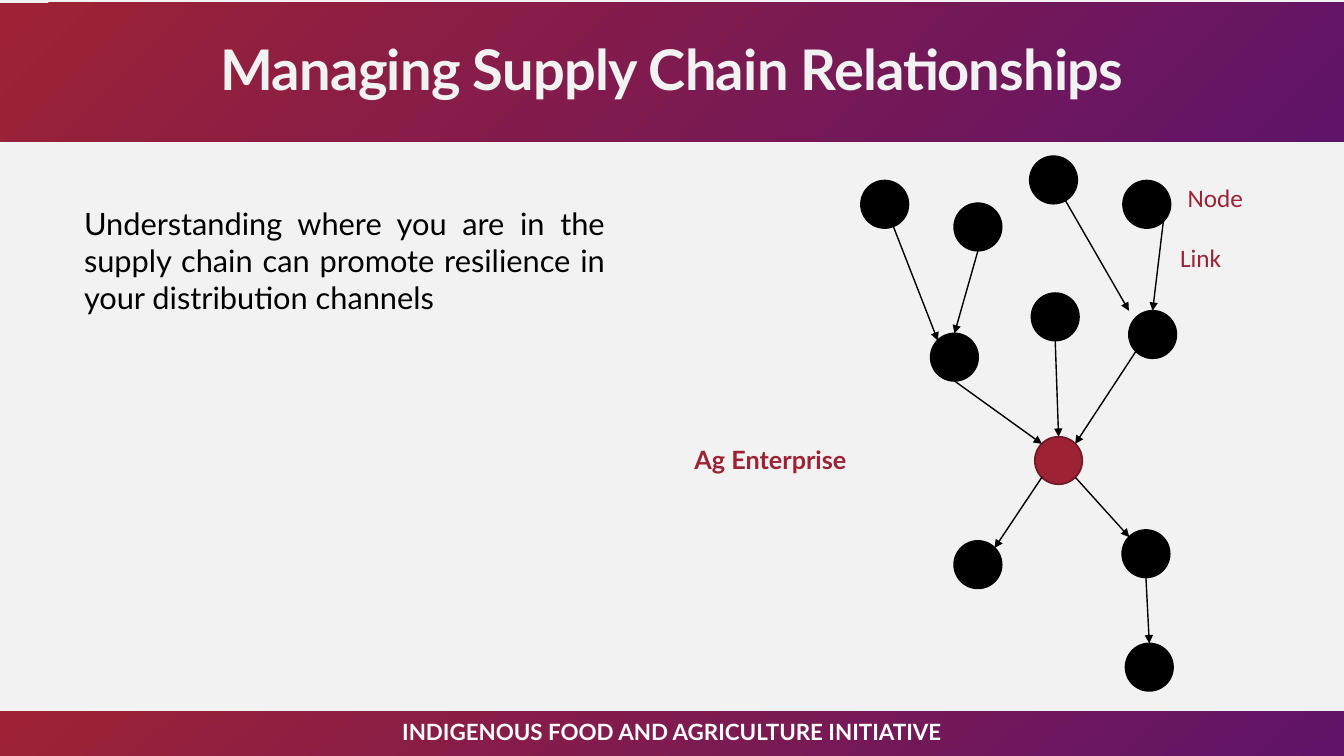
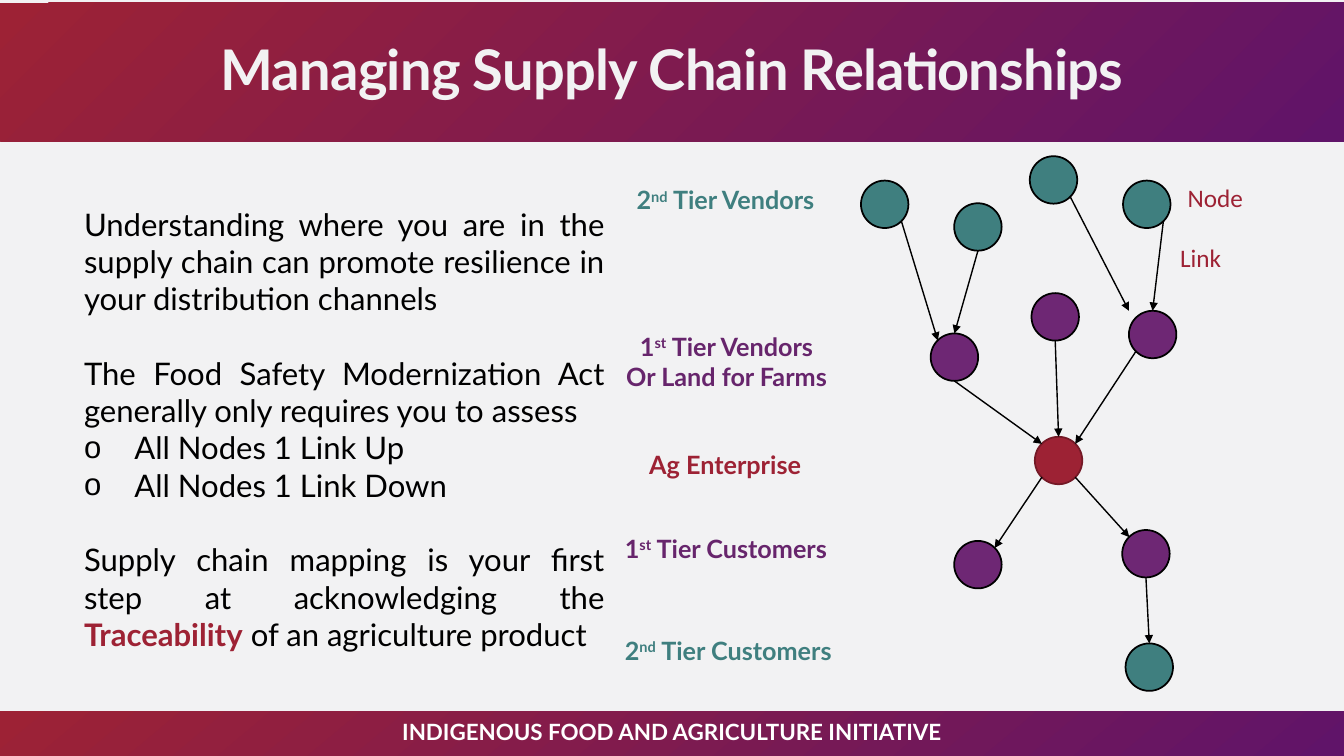
from dataclasses import dataclass

from lxml import etree
from pptx import Presentation
from pptx.dml.color import RGBColor
from pptx.enum.shapes import MSO_CONNECTOR, MSO_SHAPE
from pptx.enum.text import MSO_ANCHOR, MSO_AUTO_SIZE, PP_ALIGN
from pptx.oxml.ns import qn
from pptx.util import Emu, Pt

RECT, OVAL = MSO_SHAPE.RECTANGLE, MSO_SHAPE.OVAL
STRAIGHT = MSO_CONNECTOR.STRAIGHT
LEFT, CENTER, JUSTIFY = PP_ALIGN.LEFT, PP_ALIGN.CENTER, PP_ALIGN.JUSTIFY
TOP, MIDDLE = MSO_ANCHOR.TOP, MSO_ANCHOR.MIDDLE
NO_FIT = MSO_AUTO_SIZE.NONE

COLS, ROWS, UNIT = 160, 90, 76200
NODE = 5.65
LABEL_H = 4.8


@dataclass(frozen=True)
class Theme:
    font: str = "Lato"
    key_font: str = "Calibri"
    paper: str = "F2F2F3"
    white: str = "FFFFFF"
    black: str = "000000"
    band_start: str = "9D2235"
    band_end: str = "601469"
    red: str = "9D2234"
    red_edge: str = "741926"
    teal: str = "3F7F7F"
    purple: str = "6E2774"
    purple_text: str = "67256C"
    title_size: float = 40
    label_size: float = 18
    footer_size: float = 16


T = Theme()

SITES = {
    "top": (0.5, 0), "bottom": (0.5, 1), "center": (0.5, 0.5), "corner": (0, 0),
    "tl": (0.15, 0.15), "tr": (0.85, 0.15), "bl": (0.15, 0.85), "br": (0.85, 0.85),
}

NODES = {
    "vendor_2a": (102.5, 21.5, "tier_2"),
    "vendor_2b": (113.6, 24.2, "tier_2"),
    "vendor_2c": (122.6, 18.6, "tier_2"),
    "vendor_2d": (133.7, 21.5, "tier_2"),
    "vendor_1a": (110.8, 39.7, "tier_1"),
    "vendor_1b": (122.8, 34.9, "tier_1"),
    "vendor_1c": (134.4, 37, "tier_1"),
    "enterprise": (123.2, 52, "enterprise"),
    "customer_1a": (113.6, 64.4, "tier_1"),
    "customer_1b": (133.6, 63.1, "tier_1"),
    "customer_2": (134, 76.6, "tier_2"),
}

LINKS = [
    ("vendor_2b", "bottom", "vendor_1a", "top"),
    ("vendor_2d", "br", "vendor_1c", "top"),
    ("vendor_1a", "bottom", "enterprise", "tl"),
    ("vendor_1b", "bottom", "enterprise", "top"),
    ("vendor_1c", "bl", "enterprise", "tr"),
    ("enterprise", "bl", "customer_1a", "tr"),
    ("enterprise", "br", "customer_1b", "tl"),
    ("customer_1b", "bottom", "customer_2", "top"),
]

INTRO = ("Understanding where you are in the supply chain can promote "
         "resilience in your distribution channels")


def grid(*lengths):
    return [Emu(round(n * UNIT)) for n in lengths]


def rgb(value):
    return RGBColor.from_string(value)


def write(p, parts, size, color, font=T.font, bold=False, align=LEFT, spacing=None):
    p.alignment = align
    for part in parts:
        text, own = (part, {}) if isinstance(part, str) else part
        r = p.add_run()
        r.text = text
        r.font.name = font
        r.font.size = Pt(size)
        r.font.bold = own.get("bold", bold)
        r.font.color.rgb = rgb(own.get("color", color))
        rPr = r.font._element
        if "raised" in own:
            rPr.set("baseline", "30000")
        if spacing is not None:
            rPr.set("spc", str(spacing))


def place(shape, box, anchor=TOP):
    shape.left, shape.top, shape.width, shape.height = grid(*box)
    tf = shape.text_frame
    tf.word_wrap = True
    tf.auto_size = NO_FIT
    tf.vertical_anchor = anchor
    return tf


def add_text(s, box, lines, anchor=TOP, **fmt):
    tf = place(s.shapes.add_textbox(*grid(*box)), box, anchor)
    for i, parts in enumerate(lines):
        p = tf.add_paragraph() if i else tf.paragraphs[0]
        write(p, parts, **fmt)


def add_label(s, x, y, w, *lines, color, align=LEFT):
    add_text(s, (x, y, w, LABEL_H * len(lines)), lines, size=T.label_size,
             color=color, bold=True, align=align)


def add_band(s, box, angle):
    sp = s.shapes.add_shape(RECT, *grid(*box))
    sp.shadow.inherit = False
    sp.line.fill.background()
    sp.fill.gradient()
    sp.fill.gradient_angle = 360 - angle
    for stop, color, position in zip(sp.fill.gradient_stops,
                                     (T.band_start, T.band_end), (0, 1)):
        stop.color.rgb = rgb(color)
        stop.position = position
    s.shapes.element.insert(2, sp.element)


def set_bullet(p, char=None):
    pPr = p._p.get_or_add_pPr()
    indent = grid(6)[0] if char else 0
    pPr.set("marL", str(indent))
    pPr.set("indent", str(-indent))
    if char:
        color = etree.SubElement(pPr, qn("a:buClr"))
        etree.SubElement(color, qn("a:srgbClr")).set("val", T.black)
        etree.SubElement(pPr, qn("a:buChar")).set("char", char)
    else:
        etree.SubElement(pPr, qn("a:buNone"))


def fill_body(s, size, items):
    tf = place(s.placeholders[1], (8.8, 23.8, 64.4, 56))
    for i, (parts, kind) in enumerate(items):
        p = tf.add_paragraph() if i else tf.paragraphs[0]
        set_bullet(p, "o" if kind == "bullet" else None)
        p.space_before = Pt(size * 1.2 if i and kind == "block" else 0)
        write(p, parts, size, T.black, align=JUSTIFY)


def new_slide(prs):
    s = prs.slides.add_slide(prs.slide_layouts[1])
    add_band(s, (0, 84.7, COLS, ROWS - 84.7), 50)
    add_band(s, (0, 0.36, COLS, 16.44), 45)
    tf = place(s.shapes.title, (11, 0, 138, 17.4), MIDDLE)
    p = tf.paragraphs[0]
    p.line_spacing = 0.85
    write(p, ["Managing Supply Chain Relationships"], T.title_size, T.paper,
          bold=True, align=CENTER, spacing=-50)
    add_text(s, (11, 84.7, 138, LABEL_H),
             [["INDIGENOUS FOOD AND AGRICULTURE INITIATIVE"]], anchor=MIDDLE,
             size=T.footer_size, color=T.white, bold=True, align=CENTER)
    return s


def add_node(s, x, y, fill, edge):
    sp = s.shapes.add_shape(OVAL, *grid(x, y, NODE, NODE))
    sp.shadow.inherit = False
    sp.fill.solid()
    sp.fill.fore_color.rgb = rgb(fill)
    sp.line.color.rgb = rgb(edge)
    sp.line.width = Pt(1.25)


def site_point(node, site):
    x, y, _ = NODES[node]
    dx, dy = SITES[site]
    return x + dx * NODE, y + dy * NODE


def add_link(s, start, start_site, end, end_site):
    points = site_point(start, start_site) + site_point(end, end_site)
    line = s.shapes.add_connector(STRAIGHT, *grid(*points))
    line.line.color.rgb = rgb(T.black)
    line.line.width = Pt(1)
    etree.SubElement(line.line._get_or_add_ln(), qn("a:tailEnd")).set("type", "triangle")
    etree.SubElement(line._element.spPr, qn("a:effectLst"))


def add_network(s, tier_1, tier_2, outer_site):
    fills = {"tier_1": tier_1, "tier_2": tier_2, "enterprise": T.red}
    for x, y, role in NODES.values():
        add_node(s, x, y, fills[role],
                 T.red_edge if role == "enterprise" else T.black)
    outer = [("vendor_2a", outer_site, "vendor_1a", "tl"),
             ("vendor_2c", outer_site, "vendor_1c", "corner")]
    for link in outer + LINKS:
        add_link(s, *link)
    for x, y, text in ((140.2, 21.1, "Node"), (139.3, 28.2, "Link")):
        add_text(s, (x, y, 14.3, LABEL_H), [[text]], size=T.label_size,
                 color=T.red, font=T.key_font)


def build_overview(prs):
    s = new_slide(prs)
    add_network(s, T.black, T.black, "center")
    add_label(s, 81.5, 52.3, 23, ["Ag Enterprise"], color=T.red)
    fill_body(s, 22, [([INTRO], "block")])


def build_tiers(prs):
    s = new_slide(prs)
    add_network(s, T.purple, T.teal, "br")
    first = ["1", ("st", {"raised": True})]
    second = ["2", ("nd", {"raised": True})]
    add_label(s, 74.6, 21.4, 26, second + [" Tier Vendors"], color=T.teal)
    add_label(s, 69.7, 38.8, 33.6, first + [" Tier Vendors"], ["Or Land for Farms"],
              color=T.purple_text, align=CENTER)
    add_label(s, 76.1, 52.9, 23, ["Ag Enterprise"], color=T.red)
    add_label(s, 73.2, 62.9, 29.4, first + [" Tier Customers"], color=T.purple_text)
    add_label(s, 73.2, 75, 29.4, second + [" Tier Customers"], color=T.teal)
    fill_body(s, 22.2, [
        ([INTRO], "block"),
        (["The Food Safety Modernization Act generally only requires you to assess"], "block"),
        (["All Nodes 1 Link Up"], "bullet"),
        (["All Nodes 1 Link Down"], "bullet"),
        (["Supply chain mapping is your first step at acknowledging the ",
          ("Traceability", {"color": T.red, "bold": True}),
          " of an agriculture product"], "block"),
    ])


def main():
    prs = Presentation()
    prs.slide_width, prs.slide_height = grid(COLS, ROWS)
    fill = prs.slide_master.background.fill
    fill.solid()
    fill.fore_color.rgb = rgb(T.paper)
    build_overview(prs)
    build_tiers(prs)
    prs.save("out.pptx")


if __name__ == "__main__":
    main()
